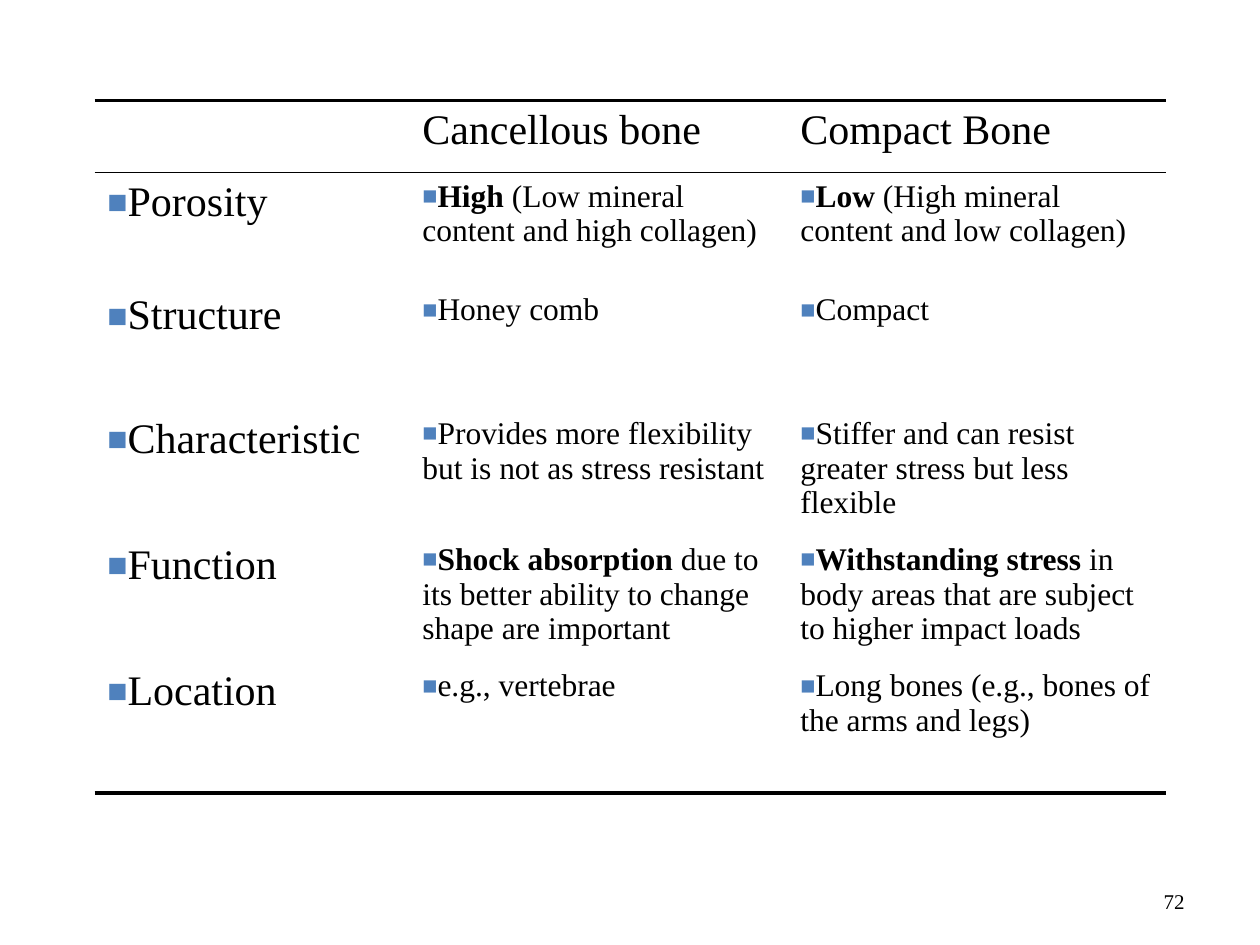
from dataclasses import dataclass

from lxml import etree
from pptx import Presentation, util as u
from pptx.dml.color import RGBColor
from pptx.enum import text as t
from pptx.oxml import ns


@dataclass
class Theme:
    font: str = "Times New Roman"
    ink: str = "000000"
    mark: str = "4F81BD"
    head: int = 24
    body: int = 18
    note: int = 12
    thick: float = 2.25
    thin: float = 1


class Deck:
    """Holds the theme and the current slide."""

    def __init__(self, theme):
        self.theme = theme
        self.prs = Presentation()
        self.prs.slide_width, self.prs.slide_height = u.Cm(25.4), u.Cm(19.05)
        self.slide = self.prs.slides.add_slide(self.prs.slide_layouts[6])

    def words(self, par, runs, size):
        """Fill a paragraph from (words, bold) pairs."""
        font = par.font
        font.name, font.size = self.theme.font, u.Pt(size)
        font.color.rgb = RGBColor.from_string(self.theme.ink)
        for words, bold in runs:
            run = par.add_run()
            run.text = words
            if bold:
                run.font.bold = True

    def bullet(self, par):
        props = par._p.get_or_add_pPr()
        props.set("marL", "0")
        props.set("indent", "0")
        color = etree.Element(ns.qn("a:buClr"))
        etree.SubElement(color, ns.qn("a:srgbClr"), val=self.theme.mark)
        size = etree.Element(ns.qn("a:buSzPct"), val="80000")
        face = etree.Element(ns.qn("a:buFont"), typeface=self.theme.font)
        char = etree.Element(ns.qn("a:buChar"), char="■")
        for spot, part in enumerate((color, size, face, char)):
            props.insert(spot, part)

    def border(self, cell, top, bottom):
        """Draw the top and bottom rules of a cell; zero means none."""
        props = cell._tc.get_or_add_tcPr()
        sides = {"lnL": 0, "lnR": 0, "lnT": top, "lnB": bottom}
        for spot, (side, width) in enumerate(sides.items()):
            line = etree.Element(ns.qn(f"a:{side}"), w=str(u.Pt(width)))
            if width:
                fill = etree.SubElement(line, ns.qn("a:solidFill"))
                etree.SubElement(fill, ns.qn("a:srgbClr"), val=self.theme.ink)
            else:
                etree.SubElement(line, ns.qn("a:noFill"))
            props.insert(spot, line)

    def table(self, left, top, cols, rows, data):
        th = self.theme
        grid = self.slide.shapes.add_table(
            len(rows), len(cols), u.Cm(left), u.Cm(top),
            u.Cm(sum(cols)), u.Cm(sum(rows))).table
        grid.first_row = grid.horz_banding = False
        for col, width in zip(grid.columns, cols):
            col.width = u.Cm(width)
        for row, height in zip(grid.rows, rows):
            row.height = u.Cm(height)

        # Rules above the header, below it and below the last row
        rules = [th.thick, th.thin] + [0] * (len(rows) - 2) + [th.thick]
        for r, line in enumerate(data):
            for c, runs in enumerate(line):
                cell = grid.cell(r, c)
                cell.fill.background()
                self.border(cell, rules[r], rules[r + 1])
                par = cell.text_frame.paragraphs[0]
                self.words(par, runs, th.body if r and c else th.head)
                if r:
                    self.bullet(par)

    def label(self, words, left, top, width, height):
        box = self.slide.shapes.add_textbox(
            u.Cm(left), u.Cm(top), u.Cm(width), u.Cm(height))
        frame = box.text_frame
        frame.word_wrap = True
        frame.vertical_anchor = t.MSO_ANCHOR.MIDDLE
        par = frame.paragraphs[0]
        par.alignment = t.PP_ALIGN.RIGHT
        self.words(par, [(words, False)], self.theme.note)


def plain(*words):
    return [[(word, False)] for word in words]


def lead(bold, rest):
    return [(bold, True), (rest, False)]


BONES = [
    [[], *plain("Cancellous bone", "Compact Bone")],
    [*plain("Porosity"),
     lead("High", " (Low mineral content and high collagen)"),
     lead("Low ", "(High mineral content and low collagen)")],
    plain("Structure", "Honey comb", "Compact"),
    plain("Characteristic",
          "Provides more flexibility but is not as stress resistant",
          "Stiffer and can resist greater stress but less flexible"),
    [*plain("Function"),
     lead("Shock absorption",
          " due to its better ability to change shape are important"),
     lead("Withstanding stress",
          " in body areas that are subject to higher impact loads")],
    plain("Location", "e.g., vertebrae",
          "Long bones (e.g., bones of the arms and legs)"),
]


def main():
    deck = Deck(Theme())
    # Slide number
    deck.label("72", 18.21, 17.65, 5.92, 1.02)
    # Comparison of bone types
    deck.table(1.91, 2.03, [6.35, 7.62, 7.62],
               [1.45, 2.29, 2.49, 2.54, 2.54, 2.64], BONES)
    deck.prs.save("out.pptx")


if __name__ == "__main__":
    main()
